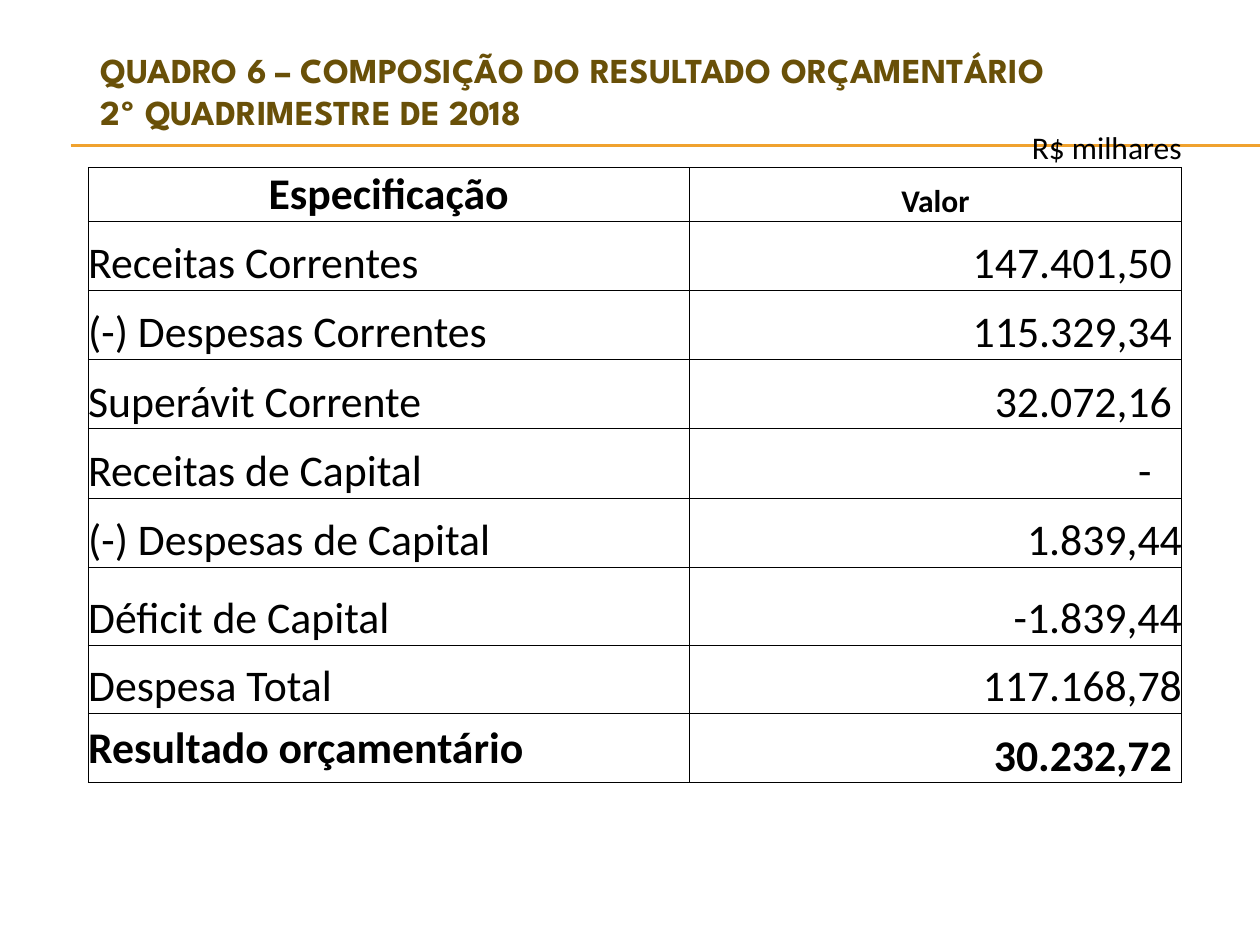
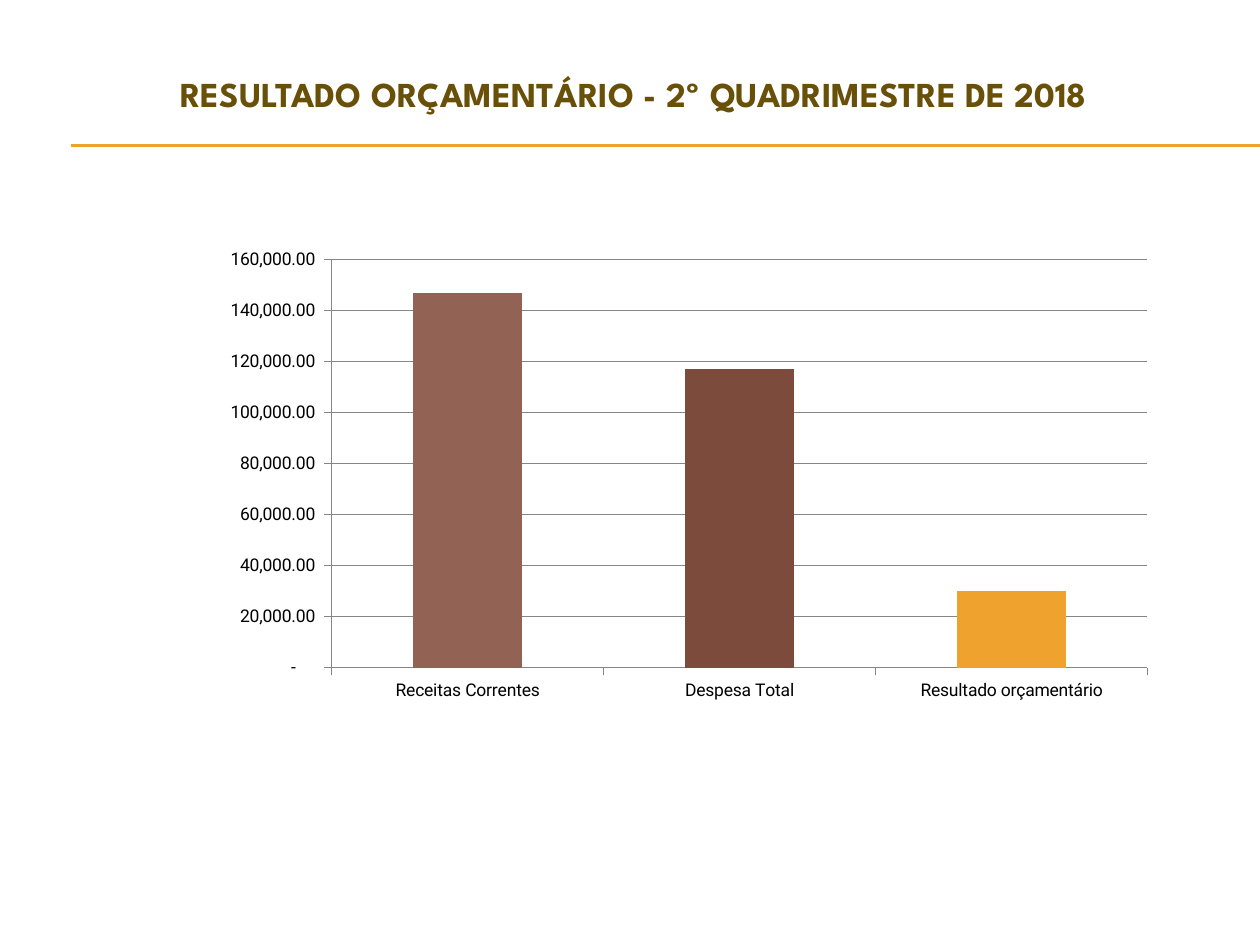
from lxml import etree
from pptx import Presentation
from pptx import util as u
from pptx.chart import data
from pptx.dml.color import RGBColor
from pptx.enum import chart as charts, shapes, text
from pptx.oxml import ns, parse_xml

COLORS = {"ink": "000000", "title": "695008", "gold": "F0A22E",
          "rose": "926255", "brown": "7C4B3B", "grid": "868686"}
FONTS = {"title": "League Spartan", "table": "Calibri", "chart": "Roboto"}
COLUMNS, ROWS = 100, 75
LEFT, RIGHT = text.PP_ALIGN.LEFT, text.PP_ALIGN.RIGHT
CENTER = text.PP_ALIGN.CENTER
BOTTOM, MIDDLE = text.MSO_ANCHOR.BOTTOM, text.MSO_ANCHOR.MIDDLE


class Report:
    """Holds the deck style and the current page, on a 100 by 75 grid."""

    def __init__(self):
        self.deck = Presentation()
        self.deck.slide_width, self.deck.slide_height = u.Inches(10), u.Inches(7.5)
        self.page = None

    def x(self, columns):
        return round(self.deck.slide_width * columns / COLUMNS)

    def y(self, rows):
        return round(self.deck.slide_height * rows / ROWS)

    def area(self, left, top, width, height):
        return self.x(left), self.y(top), self.x(width), self.y(height)

    def color(self, name):
        return RGBColor.from_string(COLORS[name])

    def style(self, font, face, size, color="ink", bold=False):
        font.name, font.size, font.bold = FONTS[face], u.Pt(size), bold
        font.color.rgb = self.color(color)

    def new_page(self, title, area):
        self.page = self.deck.slides.add_slide(self.deck.slide_layouts[5])
        for row in (11.5, 11.6):
            self.rule(5.6, 100, row)
        box = self.page.shapes.title
        box.left, box.top, box.width, box.height = self.area(*area)
        frame = box.text_frame
        frame.text = title
        frame.word_wrap = True
        frame.auto_size = text.MSO_AUTO_SIZE.NONE
        frame.vertical_anchor = MIDDLE
        para = frame.paragraphs[0]
        para.alignment = LEFT
        self.style(para.font, "title", 20, "title", True)

    def rule(self, start, end, row):
        line = self.page.shapes.add_connector(
            shapes.MSO_CONNECTOR.STRAIGHT,
            self.x(start), self.y(row), self.x(end), self.y(row))
        line.line.color.rgb = self.color("gold")
        line.line.width = u.Pt(0.75)
        etree.SubElement(line._element.spPr, ns.qn("a:effectLst"))

    def table(self, area, widths, heights):
        table = self.page.shapes.add_table(
            len(heights), len(widths), *self.area(*area)).table
        table.first_row = table.horz_banding = False
        for column, width in zip(table.columns, widths):
            column.width = self.x(width)
        for row, height in zip(table.rows, heights):
            row.height = self.y(height)
        for index, row in enumerate(table.rows):
            for cell in row.cells:
                cell.fill.background()
                cell.margin_left = cell.margin_right = 0
                cell.margin_top = cell.margin_bottom = 0
                self.borders(cell, "LRTB" if index else "B")
        return table

    def borders(self, cell, visible):
        solid = f'<a:solidFill><a:srgbClr val="{COLORS["ink"]}"/></a:solidFill>'
        for place, side in enumerate("LRTB"):
            paint = solid if side in visible else "<a:noFill/>"
            line = parse_xml(f'<a:ln{side} {ns.nsdecls("a")} w="{u.Pt(0.5)}">'
                             f'{paint}</a:ln{side}>')
            cell._tc.get_or_add_tcPr().insert(place, line)

    def fill_cell(self, cell, words, align, size=25, bold=False, anchor=BOTTOM, gap=0):
        cell.text = words
        cell.vertical_anchor = anchor
        cell.margin_right = self.x(gap)
        para = cell.text_frame.paragraphs[0]
        para.alignment = align
        self.style(para.font, "table", size, bold=bold)

    def chart(self, area, bars, plot):
        source = data.CategoryChartData()
        source.categories = [name for name, _, _ in bars]
        source.add_series("Series 1", [value for _, value, _ in bars])
        chart = self.page.shapes.add_chart(
            charts.XL_CHART_TYPE.COLUMN_CLUSTERED, *self.area(*area), source).chart
        chart.has_legend = chart.has_title = False
        self.style(chart.font, "chart", 10)
        columns = chart.plots[0]
        columns.gap_width, columns.vary_by_categories = 150, False
        series = columns.series[0]
        for index, (_, _, color) in enumerate(bars):
            fill = series.points[index].format.fill
            fill.solid()
            fill.fore_color.rgb = self.color(color)
        values = chart.value_axis
        values.minimum_scale, values.maximum_scale = 0, 160000
        values.major_unit = 20000
        values.tick_labels.number_format = '#,##0.00_);(#,##0.00);"-"??_)'
        values.tick_labels.number_format_is_linked = False
        for axis in (values, chart.category_axis):
            axis.major_tick_mark = charts.XL_TICK_MARK.OUTSIDE
            axis.format.line.color.rgb = self.color("grid")
        values.major_gridlines.format.line.color.rgb = self.color("grid")
        self.place_plot(chart, plot)

    def place_plot(self, chart, shares):
        area = chart._chartSpace.chart.plotArea
        for old in area.findall(ns.qn("c:layout")):
            area.remove(old)
        layout = etree.Element(ns.qn("c:layout"))
        manual = etree.SubElement(layout, ns.qn("c:manualLayout"))
        settings = [("layoutTarget", "inner"), ("xMode", "edge"), ("yMode", "edge"),
                    *zip("xywh", shares)]
        for name, value in settings:
            etree.SubElement(manual, ns.qn(f"c:{name}")).set("val", str(value))
        area.insert(0, layout)


def budget_table(report):
    """Builds the table of the budget result."""
    report.new_page("QUADRO 6 – COMPOSIÇÃO DO RESULTADO ORÇAMENTÁRIO \v"
                    "2º QUADRIMESTRE DE 2018", (7, 5.5, 85, 3.3))
    entries = [("Receitas Correntes", "147.401,50", 0.8),
               ("(-) Despesas Correntes", "115.329,34", 0.8),
               ("Superávit Corrente", "32.072,16", 0.8),
               ("Receitas de Capital", "-", 2.4),
               ("(-) Despesas de Capital", "1.839,44", 0),
               ("Déficit de Capital", "-1.839,44", 0),
               ("Despesa Total", "117.168,78", 0),
               ("Resultado orçamentário", "30.232,72", 0.8)]
    heights = [3.1, 4.2] + [5.5] * 5 + [6.2, 5.4, 5.5]
    table = report.table((7, 10.2, 86.8, 51.8), [47.7, 16.2, 22.9], heights)
    for row in range(1, len(heights)):
        table.cell(row, 1).merge(table.cell(row, 2))
    report.fill_cell(table.cell(0, 2), "R$ milhares", RIGHT, 18)
    report.fill_cell(table.cell(1, 0), "Especificação", CENTER, bold=True)
    report.fill_cell(table.cell(1, 1), "Valor", CENTER, 18, True)
    for row, (name, value, gap) in enumerate(entries, 2):
        last = row == len(heights) - 1
        report.fill_cell(table.cell(row, 0), name, LEFT, bold=last,
                         anchor=MIDDLE if last else BOTTOM)
        report.fill_cell(table.cell(row, 1), value, RIGHT, bold=last, gap=gap)


def budget_chart(report):
    """Builds the column chart of the budget result."""
    report.new_page("RESULTADO ORÇAMENTÁRIO - 2º QUADRIMESTRE DE 2018",
                    (13.3, 3.1, 86.7, 8.7))
    bars = [("Receitas Correntes", 147000, "rose"),
            ("Despesa Total", 117000, "brown"),
            ("Resultado orçamentário", 30000, "gold")]
    report.chart((6.2, 11.7, 87.5, 52.3), bars, (0.23, 0.17, 0.74, 0.62))


def main():
    """Builds and saves the deck."""
    report = Report()
    budget_table(report)
    budget_chart(report)
    report.deck.save("out.pptx")


if __name__ == "__main__":
    main()
